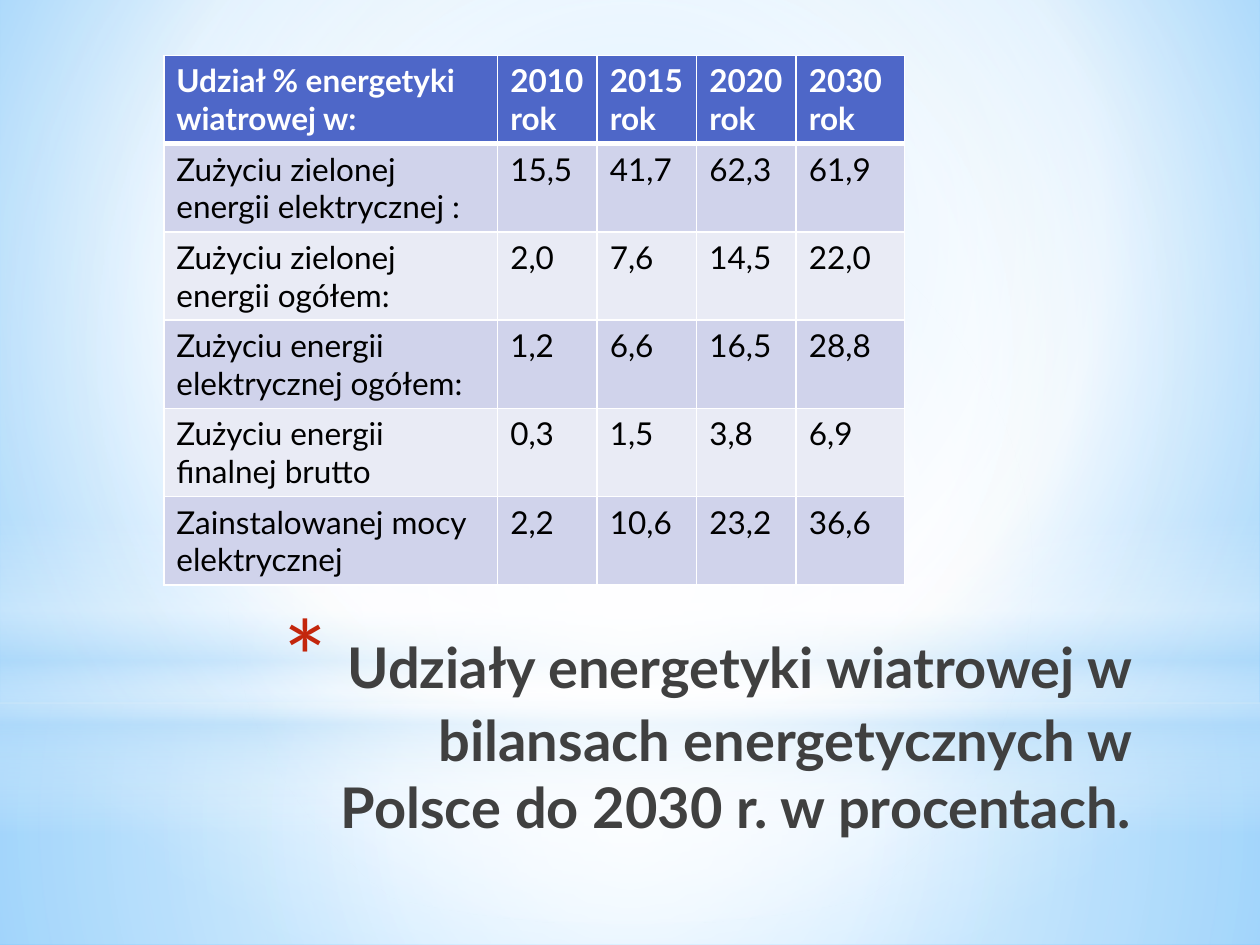
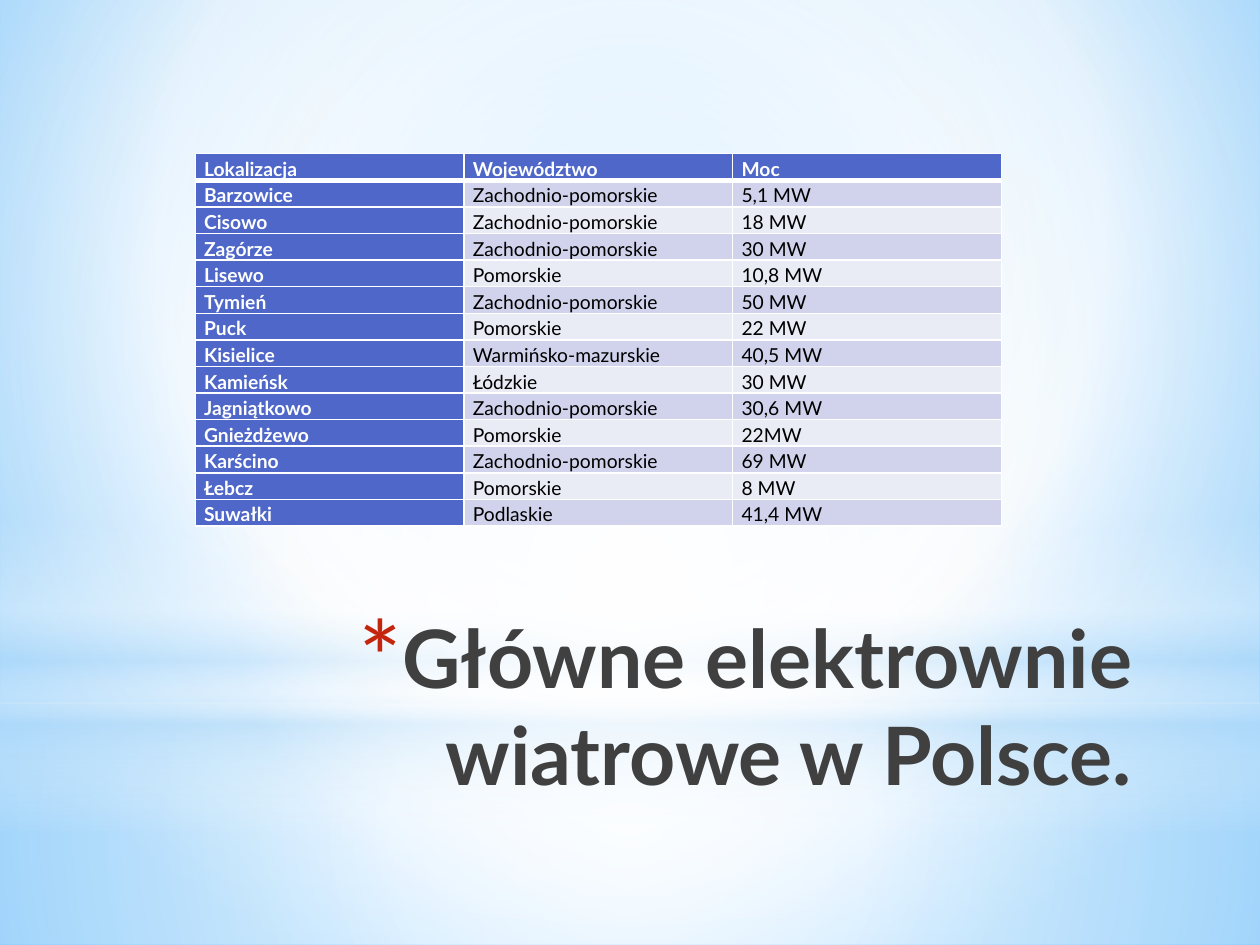
from dataclasses import dataclass

from lxml import etree
from pptx import Presentation
from pptx.dml.color import RGBColor
from pptx.enum.shapes import MSO_SHAPE as Shape
from pptx.enum.text import MSO_ANCHOR as Anchor, PP_ALIGN as Align
from pptx.oxml.ns import nsdecls, qn
from pptx.oxml import parse_xml
from pptx.util import Inches, Pt

COLUMNS, ROWS = 100, 75
WIDTH, HEIGHT = Inches(10), Inches(7.5)


@dataclass(frozen=True)
class Theme:
    """Colours, font and type sizes shared by the slides."""
    font: str = "Lato"
    ink: str = "000000"
    paper: str = "FFFFFF"
    title: str = "404040"
    bullet: str = "C3260C"
    accent: str = "4E67C8"
    bands: tuple = ("D0D3EB", "E9EBF5")
    haze: str = "B4DCFA"
    sky: str = "9ED5FF"
    deep_sky: str = "5BB9FF"
    title_size: int = 46
    long_title_size: int = 32
    share_size: int = 18
    plant_size: int = 11
    rule: int = 1
    header_rule: int = 3


THEME = Theme()
CENTRE = (50, 50, 50, 50)

SHARES = [
    ("Udział % energetyki wiatrowej w:", "2010 rok", "2015 rok", "2020 rok", "2030 rok"),
    ("Zużyciu zielonej energii elektrycznej :", "15,5", "41,7", "62,3", "61,9"),
    ("Zużyciu zielonej energii ogółem:", "2,0", "7,6", "14,5", "22,0"),
    ("Zużyciu energii elektrycznej ogółem:", "1,2", "6,6", "16,5", "28,8"),
    ("Zużyciu energii finalnej brutto", "0,3", "1,5", "3,8", "6,9"),
    ("Zainstalowanej mocy elektrycznej", "2,2", "10,6", "23,2", "36,6"),
]
PLANTS = [
    ("Lokalizacja", "Województwo", "Moc"),
    ("Barzowice", "Zachodnio-pomorskie", "5,1 MW"),
    ("Cisowo", "Zachodnio-pomorskie", "18 MW"),
    ("Zagórze", "Zachodnio-pomorskie", "30 MW"),
    ("Lisewo", "Pomorskie", "10,8 MW"),
    ("Tymień", "Zachodnio-pomorskie", "50 MW"),
    ("Puck", "Pomorskie", "22 MW"),
    ("Kisielice", "Warmińsko-mazurskie", "40,5 MW"),
    ("Kamieńsk", "Łódzkie", "30 MW"),
    ("Jagniątkowo", "Zachodnio-pomorskie", "30,6 MW"),
    ("Gnieżdżewo", "Pomorskie", "22MW"),
    ("Karścino", "Zachodnio-pomorskie", "69 MW"),
    ("Łebcz", "Pomorskie", "8 MW"),
    ("Suwałki", "Podlaskie", "41,4 MW"),
]


def across(columns):
    """Turn grid columns into a length."""
    return round(WIDTH * columns / COLUMNS)


def down(rows):
    """Turn grid rows into a length."""
    return round(HEIGHT * rows / ROWS)


def place(left, top, width, height):
    """Turn a grid box into slide lengths."""
    return across(left), down(top), across(width), down(height)


def gradient(stops, focus=None, angle=90):
    """Build a circular gradient around focus, or a linear one at angle."""
    marks = "".join(
        f'<a:gs pos="{position * 1000}"><a:srgbClr val="{colour}">'
        f'<a:alpha val="{opacity * 1000}"/></a:srgbClr></a:gs>'
        for position, colour, opacity in stops)
    if focus:
        sides = " ".join(f'{side}="{share * 1000}"' for side, share in zip("ltrb", focus))
        course = f'<a:path path="circle"><a:fillToRect {sides}/></a:path>'
    else:
        course = f'<a:lin ang="{angle * 60000}" scaled="0"/>'
    return parse_xml(f'<a:gradFill {nsdecls("a")} rotWithShape="1">'
                     f'<a:gsLst>{marks}</a:gsLst>{course}</a:gradFill>')


def paint(fill, element, blend):
    """Give a fill inside element a gradient."""
    fill.solid()
    solid = element.find(".//" + qn("a:solidFill"))
    solid.getparent().replace(solid, blend)


def add_glow(slide, kind, box, stops, focus=None):
    """Add a borderless translucent gradient shape."""
    glow = slide.shapes.add_shape(kind, *place(*box))
    glow.shadow.inherit = False
    glow.line.fill.background()
    paint(glow.fill, glow._element, gradient(stops, focus))


def add_sky(slide):
    """Draw the backdrop common to all slides."""
    white, haze = THEME.paper, THEME.haze
    paint(slide.background.fill, slide._element, gradient(
        [(0, THEME.sky, 100), (60, white, 100), (100, THEME.deep_sky, 100)],
        (20, 10, 20, 60)))
    horizon = 55.8
    add_glow(slide, Shape.RECTANGLE, (0, horizon, COLUMNS, ROWS - horizon),
             [(0, white, 91), (37, white, 76), (100, haze, 79)], CENTRE)
    add_glow(slide, Shape.RECTANGLE, (0, 0, COLUMNS, horizon),
             [(0, white, 89), (48, white, 62), (100, haze, 79)], CENTRE)
    add_glow(slide, Shape.RECTANGLE, (0, 41.2, COLUMNS, 25),
             [(0, white, 0), (29, white, 30), (45, haze, 40),
              (55, white, 26), (65, haze, 60), (100, white, 0)])
    add_glow(slide, Shape.OVAL, (0, 17.5, COLUMNS, horizon),
             [(0, white, 100), (56, white, 0)], CENTRE)


def write(paragraph, text, *, size, colour, bold=False, align=Align.LEFT, spacing=None):
    """Append formatted text to a paragraph."""
    paragraph.alignment = align
    if spacing:
        paragraph.line_spacing = spacing
    run = paragraph.add_run()
    run.text = text
    run.font.name = THEME.font
    run.font.size = Pt(size)
    run.font.bold = bold
    run.font.color.rgb = RGBColor.from_string(colour)


def add_bullet(paragraph, indent=Inches(0.35), scale=128):
    """Give a paragraph the red asterisk bullet."""
    props = paragraph._p.get_or_add_pPr()
    props.set("marL", str(indent))
    props.set("indent", str(-indent))
    colour = etree.SubElement(props, qn("a:buClr"))
    etree.SubElement(colour, qn("a:srgbClr"), val=THEME.bullet)
    etree.SubElement(props, qn("a:buSzPct"), val=str(scale * 1000))
    etree.SubElement(props, qn("a:buFont"), typeface=THEME.font)
    etree.SubElement(props, qn("a:buChar"), char="*")


def add_title(slide, *parts):
    """Add the right-aligned title from (text, size) parts."""
    frame = slide.shapes.add_textbox(*place(19.6, 47.8, 71.2, 12.5)).text_frame
    frame.word_wrap = True
    frame.vertical_anchor = Anchor.TOP
    title = frame.paragraphs[0]
    for text, size in parts:
        write(title, text, size=size, colour=THEME.title, bold=True, align=Align.RIGHT)
    add_bullet(title)


def add_borders(cell, top, bottom):
    """Draw white cell borders; top and bottom are widths in points."""
    props = cell._tc.get_or_add_tcPr()
    widths = {"L": THEME.rule, "R": THEME.rule, "T": top, "B": bottom}
    for order, (side, width) in enumerate(widths.items()):
        props.insert(order, parse_xml(
            f'<a:ln{side} {nsdecls("a")} w="{Pt(width)}"><a:solidFill>'
            f'<a:srgbClr val="{THEME.paper}"/></a:solidFill></a:ln{side}>'))


def add_data_table(slide, records, left, top, columns, row, size,
                   label_column=False, margins=None, spacing=None):
    """Add a banded table with a header row and optional label column."""
    box = place(left, top, sum(columns), row * len(records))
    table = slide.shapes.add_table(len(records), len(columns), *box).table
    table.first_col = label_column
    for column, width in zip(table.columns, columns):
        column.width = across(width)
    for r, record in enumerate(records):
        table.rows[r].height = down(row)
        for c, text in enumerate(record):
            cell = table.cell(r, c)
            strong = r == 0 or (label_column and c == 0)
            if margins:
                cell.margin_left = cell.margin_right = Inches(margins[0])
                cell.margin_top = cell.margin_bottom = Inches(margins[1])
            cell.fill.solid()
            cell.fill.fore_color.rgb = RGBColor.from_string(
                THEME.accent if strong else THEME.bands[(r - 1) % 2])
            add_borders(cell, THEME.header_rule if r == 1 else THEME.rule,
                        THEME.header_rule if r == 0 else THEME.rule)
            write(cell.text_frame.paragraphs[0], text, size=size, bold=strong,
                  colour=THEME.paper if strong else THEME.ink, spacing=spacing)


def add_slide(deck):
    """Add a blank slide with the shared backdrop."""
    slide = deck.slides.add_slide(deck.slide_layouts[6])
    add_sky(slide)
    return slide


def main():
    """Build and save the deck."""
    deck = Presentation()
    deck.slide_width, deck.slide_height = WIDTH, HEIGHT

    shares = add_slide(deck)
    add_title(shares, (" ", THEME.title_size),
              ("Udziały energetyki wiatrowej w bilansach energetycznych "
               "w Polsce do 2030 r. w procentach.", THEME.long_title_size))
    add_data_table(shares, SHARES, 13, 4.4, (26.5, 7.9, 7.9, 7.9, 8.6), 7, THEME.share_size)

    plants = add_slide(deck)
    add_title(plants, ("Główne elektrownie wiatrowe w Polsce.", THEME.title_size))
    add_data_table(plants, PLANTS, 15.5, 12.2, (21.33,) * 3, 2.1, THEME.plant_size,
                   label_column=True, margins=(0.07, 0), spacing=1.15)

    deck.save("out.pptx")


if __name__ == "__main__":
    main()
